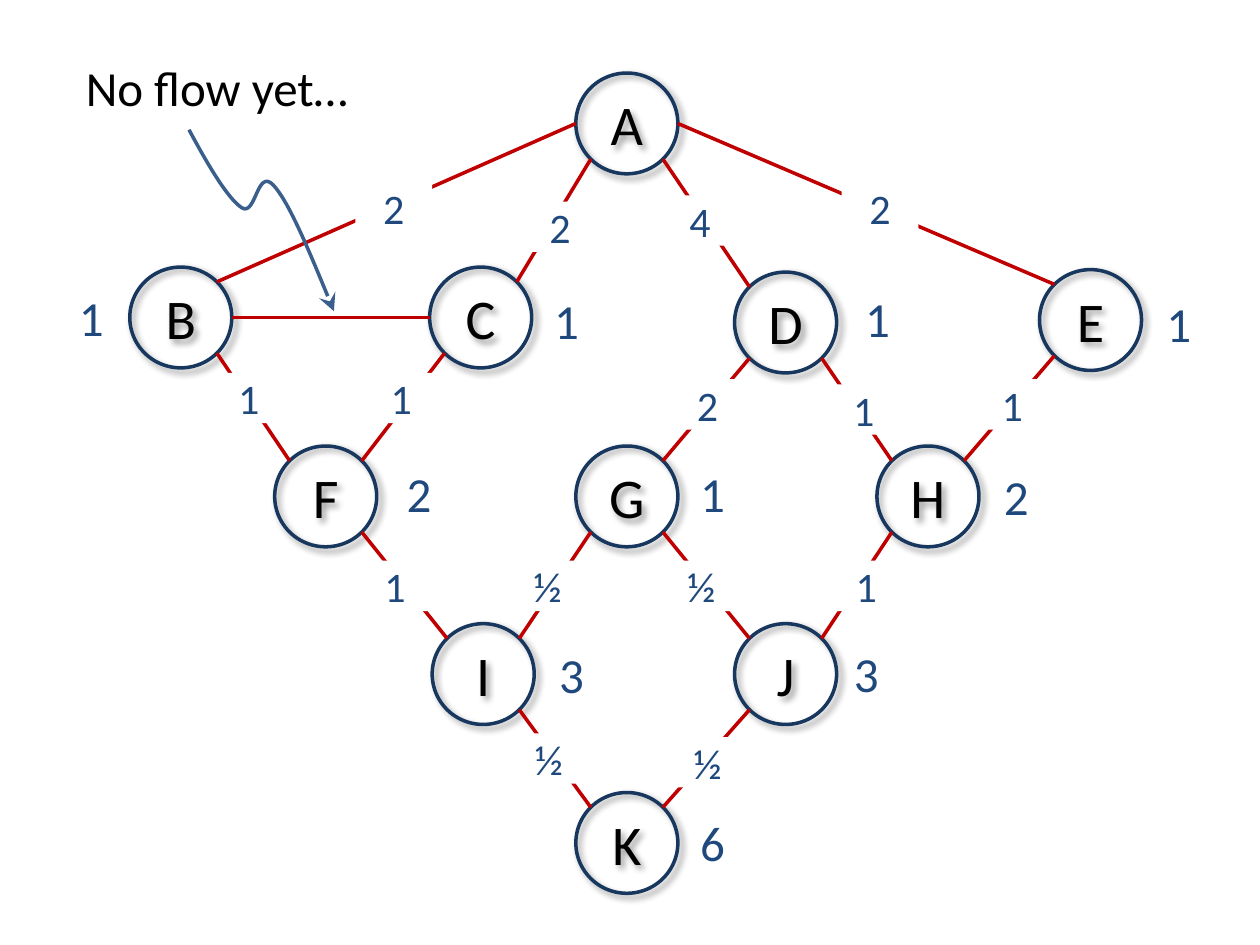
from math import copysign, sqrt

from lxml.etree import SubElement
from pptx import Presentation
from pptx.dml.color import RGBColor
from pptx.enum.shapes import MSO_CONNECTOR, MSO_SHAPE
from pptx.enum.text import MSO_ANCHOR as Anchor, MSO_AUTO_SIZE as AutoSize, PP_ALIGN as Align
from pptx.oxml.ns import qn
from pptx.util import Inches, Pt

COLORS = {"outline": "17375E", "edge": "C00000", "value": "1F497D",
          "arrow": "3A5F8C", "text": "000000", "paper": "FFFFFF"}
FONT = "Calibri"
NODE_WIDTH, NODE_HEIGHT = 0.81, 0.8
LABEL_WIDTH, LABEL_HEIGHT = 0.61, 0.4
COUNT_HEIGHT = 0.57

NODES = {
    "A": (4.57, 0.58),
    "B": (1.03, 2.12), "C": (3.41, 2.12), "D": (5.83, 2.16), "E": (8.25, 2.14),
    "F": (2.18, 3.54), "G": (4.57, 3.54), "H": (6.96, 3.54),
    "I": (3.43, 4.95), "J": (5.83, 4.95),
    "K": (4.57, 6.29),
}
COUNTS = [
    ("1", 0.42, 2.23), ("1", 4.19, 2.26), ("1", 6.66, 2.24), ("1", 9.05, 2.28),
    ("2", 3.02, 3.63), ("1", 5.35, 3.63), ("2", 7.76, 3.65),
    ("3", 4.23, 5.07), ("3", 6.57, 5.06),
    ("6", 5.35, 6.4),
]
EDGES = [
    ("A", "B", "2", 2.82, 1.45), ("A", "C", "2", 4.14, 1.6),
    ("A", "D", "4", 5.25, 1.55), ("A", "E", "2", 6.68, 1.45),
    ("B", "C", None, 0, 0),
    ("B", "F", "1", 1.67, 2.96), ("C", "F", "1", 2.88, 2.96),
    ("D", "G", "2", 5.31, 3.01), ("D", "H", "1", 6.55, 3.05),
    ("E", "H", "1", 7.73, 3.01),
    ("F", "I", "1", 2.83, 4.45), ("G", "I", "½ ", 4.08, 4.45),
    ("G", "J", "½ ", 5.3, 4.45), ("H", "J", "1", 6.57, 4.45),
    ("I", "K", "½ ", 4.09, 5.82), ("J", "K", "½ ", 5.35, 5.85),
]
NOTE = ("No flow yet…", 0.25, 0.41, 2.94)
NOTE_CURVE = [(1.5, 1.03),
              (1.65, 1.31), (1.81, 1.58), (1.92, 1.65),
              (2.03, 1.72), (2.04, 1.33), (2.17, 1.47),
              (2.29, 1.6), (2.47, 2.03), (2.65, 2.47)]


def color(name):
    return RGBColor.from_string(COLORS[name])


def style_line(line, name):
    line.color.rgb = color(name)
    line.width = Pt(2)


def write(shape, text, size, name):
    para = shape.text_frame.paragraphs[0]
    para.alignment = Align.CENTER
    span = para.add_run()
    span.text = text
    span.font.size = Pt(size)
    span.font.name = FONT
    span.font.color.rgb = color(name)


def add_text(slide, text, left, top, width, height, size, name):
    box = slide.shapes.add_textbox(*map(Inches, (left, top, width, height)))
    box.text_frame.word_wrap = True
    box.text_frame.auto_size = AutoSize.SHAPE_TO_FIT_TEXT
    write(box, text, size, name)
    return box


def add_node(slide, letter, left, top):
    node = slide.shapes.add_shape(
        MSO_SHAPE.OVAL, *map(Inches, (left, top, NODE_WIDTH, NODE_HEIGHT)))
    node.fill.background()
    style_line(node.line, "outline")
    node.shadow.inherit = False
    effects = node.element.spPr.find(qn("a:effectLst"))
    shadow = SubElement(effects, qn("a:outerShdw"), blurRad=str(Pt(4)), dist=str(Pt(3)),
                        dir="2700000", algn="tl", rotWithShape="0")
    tint = SubElement(shadow, qn("a:srgbClr"), val=COLORS["text"])
    SubElement(tint, qn("a:alpha"), val="40000")
    frame = node.text_frame
    frame.vertical_anchor = Anchor.MIDDLE
    frame.margin_left = frame.margin_right = 0
    write(node, letter, 32, "text")


def rim_point(letter, across, down):
    left, top = NODES[letter]
    reach = sqrt(0.5) if down else 1
    return (Inches(left + NODE_WIDTH / 2 * (1 + across * reach)),
            Inches(top + NODE_HEIGHT / 2 * (1 + down * reach)))


def add_edge(slide, start, end):
    run = NODES[end][0] - NODES[start][0]
    drop = NODES[end][1] - NODES[start][1]
    across = copysign(1, run)
    steep = drop > abs(run) / 2
    begin = rim_point(start, across, 1 if steep else 0)
    finish = rim_point(end, -across, -1 if drop else 0)
    edge = slide.shapes.add_connector(MSO_CONNECTOR.STRAIGHT, *begin, *finish)
    style_line(edge.line, "edge")
    SubElement(edge.element.spPr, qn("a:effectLst"))


def add_curved_arrow(slide, points):
    start, *rest = [(Inches(x), Inches(y)) for x, y in points]
    builder = slide.shapes.build_freeform(*start)
    builder.add_line_segments(rest, close=False)
    arrow = builder.convert_to_shape()
    segments = list(arrow.element.iter(qn("a:lnTo")))
    for index in range(0, len(segments), 3):
        curve = SubElement(segments[index].getparent(), qn("a:cubicBezTo"))
        for segment in segments[index:index + 3]:
            curve.append(segment[0])
            segment.getparent().remove(segment)
    arrow.fill.background()
    arrow.shadow.inherit = False
    style_line(arrow.line, "arrow")
    SubElement(arrow.element.spPr.find(qn("a:ln")), qn("a:tailEnd"),
               type="stealth", w="lg", len="lg")


def main():
    deck = Presentation()
    deck.slide_width, deck.slide_height = Inches(10), Inches(7.5)
    slide = deck.slides.add_slide(deck.slide_layouts[6])

    for letter, (left, top) in NODES.items():
        add_node(slide, letter, left, top)
    for start, end, *_ in EDGES:
        add_edge(slide, start, end)
    for count, left, top in COUNTS:
        add_text(slide, count, left, top, LABEL_WIDTH, COUNT_HEIGHT, 28, "value")
    note, left, top, width = NOTE
    add_text(slide, note, left, top, width, COUNT_HEIGHT, 28, "text")
    for _, _, flow, left, top in EDGES:
        if flow:
            label = add_text(slide, flow, left, top, LABEL_WIDTH, LABEL_HEIGHT, 24, "value")
            label.fill.solid()
            label.fill.fore_color.rgb = color("paper")
            label.text_frame.margin_top = label.text_frame.margin_bottom = 0
    add_curved_arrow(slide, NOTE_CURVE)

    deck.save("out.pptx")


if __name__ == "__main__":
    main()
